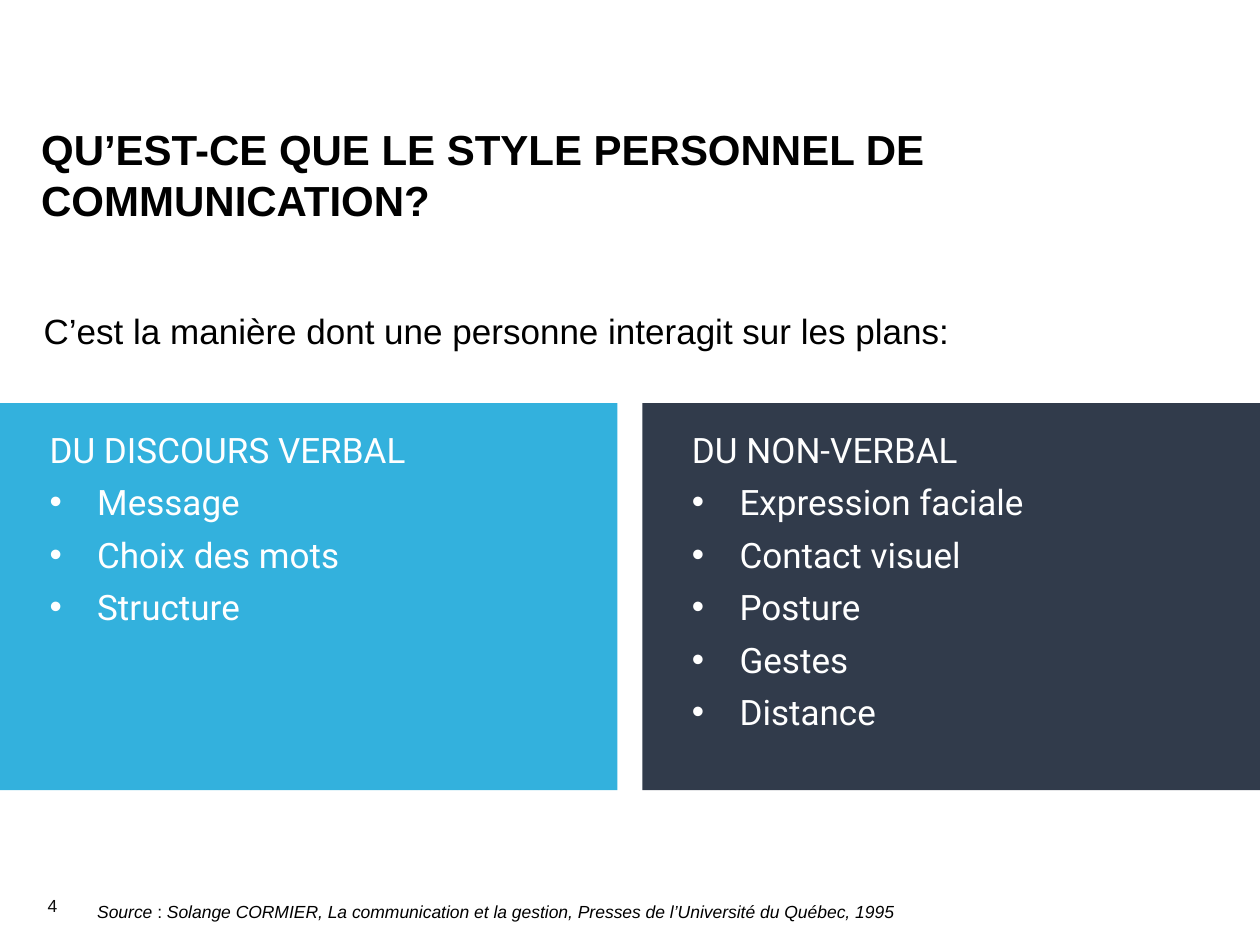
from lxml import etree
from pptx import Presentation
from pptx.dml.color import RGBColor
from pptx.enum import shapes, text
from pptx.oxml import ns
from pptx.util import Cm, Pt

SLIDE_WIDTH, SLIDE_HEIGHT = 25.4, 19.05
PANEL_GAP = 0.5
PANEL_WIDTH = (SLIDE_WIDTH - PANEL_GAP) / 2
PANEL_TOP, PANEL_HEIGHT = 8.13, 7.8
TEXT_INDENT, BULLET_HANG = 1.0, 0.96

PANELS = [
    ("33B1DD", "DU DISCOURS VERBAL", ["Message", "Choix des mots", "Structure"]),
    ("313B4B", "DU NON-VERBAL",
     ["Expression faciale", "Contact visuel", "Posture", "Gestes", "Distance"]),
]


def color(value):
    return RGBColor.from_string(value)


def style(font, size, name="Arial", fill="000000", bold=False, italic=False):
    font.size, font.name = Pt(size), name
    font.bold, font.italic = bold, italic
    font.color.rgb = color(fill)


def add_text(slide, box, runs, size, fill="000000", bold=False,
             anchor=text.MSO_ANCHOR.TOP):
    """Add one wrapped paragraph made of (words, italic) runs."""
    frame = slide.shapes.add_textbox(*map(Cm, box)).text_frame
    frame.word_wrap = True
    frame.vertical_anchor = anchor
    for words, italic in runs:
        run = frame.paragraphs[0].add_run()
        run.text = words
        style(run.font, size, fill=fill, bold=bold, italic=italic)


def indent(paragraph, left, hanging=0):
    properties = paragraph._p.get_or_add_pPr()
    properties.set("marL", str(Cm(left)))
    properties.set("indent", str(Cm(-hanging)))
    return properties


def add_bullet(paragraph):
    properties = indent(paragraph, TEXT_INDENT + BULLET_HANG, BULLET_HANG)
    bullet_color = etree.SubElement(properties, ns.qn("a:buClr"))
    etree.SubElement(bullet_color, ns.qn("a:srgbClr"), val="FFFFFF")
    etree.SubElement(properties, ns.qn("a:buFont"), typeface="Arial")
    etree.SubElement(properties, ns.qn("a:buChar"), char="•")


def add_panel(slide, box, fill, heading, items):
    """Add a filled panel with a heading and a bulleted list."""
    shape = slide.shapes.add_shape(shapes.MSO_SHAPE.RECTANGLE, *map(Cm, box))
    shape.shadow.inherit = False
    shape.fill.solid()
    shape.fill.fore_color.rgb = color(fill)
    shape.line.fill.background()

    frame = shape.text_frame
    frame.word_wrap = True
    frame.vertical_anchor = text.MSO_ANCHOR.TOP
    frame.margin_left = frame.margin_right = frame.margin_bottom = 0
    frame.margin_top = Cm(0.5)
    frame.text = "\n".join([heading, *items])
    for index, paragraph in enumerate(frame.paragraphs):
        paragraph.alignment = text.PP_ALIGN.LEFT
        if index == 0:
            indent(paragraph, TEXT_INDENT)
        else:
            paragraph.space_before = Pt(6)
            add_bullet(paragraph)
        style(paragraph.runs[0].font, 20, "Roboto", "FFFFFF")


def add_header(slide, left, top, width):
    """Add the title and the introductory sentence."""
    add_text(slide, (left, top, width, 2.34),
             [("QU’EST-CE QUE LE STYLE PERSONNEL DE COMMUNICATION?", False)],
             24, bold=True, anchor=text.MSO_ANCHOR.MIDDLE)
    add_text(slide, (left + 0.05, top + 3.78, width, 1.4),
             [("C’est la manière dont une personne interagit sur les plans:", False)],
             20)


def add_footer(slide, left, top):
    """Add the page number and the source."""
    add_text(slide, (left, top, 1, 1), [("4", False)], 10, "0C0C0C")
    add_text(slide, (left + 1, top + 0.12, 20.4, 0.7),
             [("Source\u00a0", True), (": ", False),
              ("Solange CORMIER, La communication et la gestion, "
               "Presses de l’Université du Québec, 1995", True)], 10)


def main():
    presentation = Presentation()
    presentation.slide_width = Cm(SLIDE_WIDTH)
    presentation.slide_height = Cm(SLIDE_HEIGHT)
    slide = presentation.slides.add_slide(presentation.slide_layouts[6])

    add_header(slide, 0.58, 2.34, 22.86)
    # Two equal panels reaching the slide's edges
    for index, panel in enumerate(PANELS):
        left = index * (PANEL_WIDTH + PANEL_GAP)
        add_panel(slide, (left, PANEL_TOP, PANEL_WIDTH, PANEL_HEIGHT), *panel)
    add_footer(slide, 0.71, 17.91)

    presentation.save("out.pptx")


if __name__ == "__main__":
    main()
